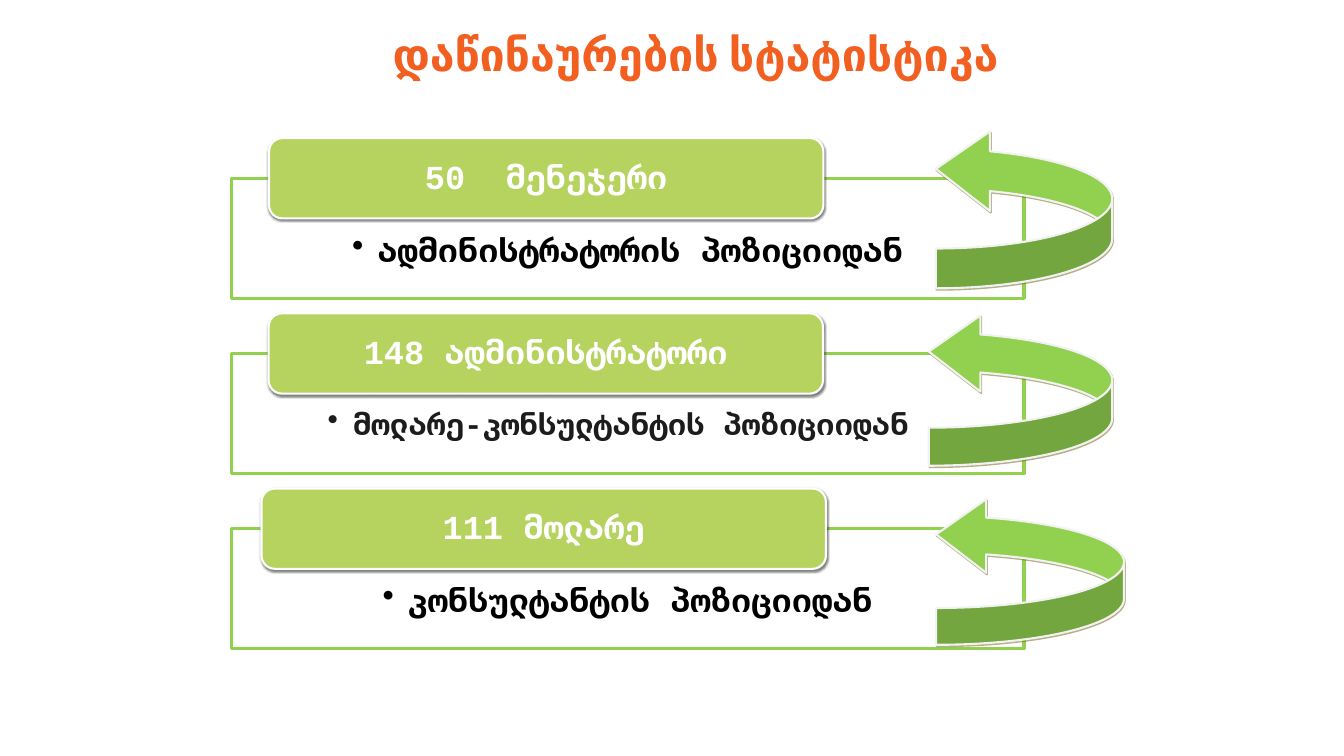
from lxml import etree
from pptx import Presentation
from pptx.dml.color import RGBColor
from pptx.enum.shapes import MSO_SHAPE
from pptx.enum.text import MSO_ANCHOR, MSO_AUTO_SIZE, PP_ALIGN
from pptx.oxml.ns import qn
from pptx.util import Cm, Pt

RECTANGLE = MSO_SHAPE.RECTANGLE
ROUNDED = MSO_SHAPE.ROUNDED_RECTANGLE
CURVED_ARROW = MSO_SHAPE.CURVED_UP_ARROW
TOP, MIDDLE = MSO_ANCHOR.TOP, MSO_ANCHOR.MIDDLE
CENTER = PP_ALIGN.CENTER
NO_AUTOFIT = MSO_AUTO_SIZE.NONE

TITLE = "დაწინაურების სტატისტიკა"
PROMOTIONS = [
    {"role": "50  მენეჯერი", "origin": "ადმინისტრატორის პოზიციიდან",
     "size": 48, "color": "black", "badge": (13.56, 27.94),
     "arrow": (47.6, 6.07, 8.03, 8.89)},
    {"role": "148 ადმინისტრატორი", "origin": "მოლარე-კონსულტანტის პოზიციიდან ",
     "size": 44, "color": "ink", "badge": (13.54, 27.94),
     "arrow": (47.6, 15.01, 7.67, 9.25)},
    {"role": "111 მოლარე", "origin": "კონსულტანტის პოზიციიდან",
     "size": 48, "color": "black", "badge": (13.18, 28.45),
     "arrow": (48.21, 24.05, 7.42, 9.47)},
]

THEME = {
    "orange": "F26021", "green": "92D050", "lime": "B6D25F", "white": "FFFFFF",
    "pale": "F2F2F2", "black": "000000", "ink": "1C1C1C", "olive": "6E5E11",
    "title_font": "Calibri", "body_font": "Courier New",
    "title_size": 64, "role_size": 48,
}

PANEL_LEFT, PANEL_TOP, PANEL_WIDTH, PANEL_HEIGHT = 11.68, 8.99, 39.93, 6.05
ROW_PITCH = 8.83
BADGE_RISE, BADGE_HEIGHT = 2.03, 4.05
BULLET_INDENT = 1.27


def rgb(name):
    return RGBColor.from_string(THEME[name])


def add_block(slide, preset, box, fill, line, line_width):
    block = slide.shapes.add_shape(preset, *(Cm(length) for length in box))
    block.shadow.inherit = False
    if fill:
        block.fill.solid()
        block.fill.fore_color.rgb = rgb(fill)
    else:
        block.fill.background()
    block.line.color.rgb = rgb(line)
    block.line.width = Pt(line_width)
    return block


def cast_shadow(block, color, blur, distance, angle):
    effects = block._element.spPr.find(qn("a:effectLst"))
    shadow = etree.SubElement(
        effects, qn("a:outerShdw"), blurRad=str(Pt(blur)), dist=str(Pt(distance)),
        dir=str(angle * 60000), algn="ctr", rotWithShape="0")
    tint = etree.SubElement(shadow, qn("a:srgbClr"), val=THEME[color])
    etree.SubElement(tint, qn("a:alpha"), val="50000")


def write(shape, text, font, size, color, anchor, insets, bullet=False):
    frame = shape.text_frame
    frame.text = text
    frame.word_wrap = True
    frame.auto_size = NO_AUTOFIT
    frame.vertical_anchor = anchor
    (frame.margin_left, frame.margin_top,
     frame.margin_right, frame.margin_bottom) = (Cm(inset) for inset in insets)
    paragraph = frame.paragraphs[0]
    paragraph.alignment = CENTER
    if bullet:
        paragraph.level = 1
        properties = paragraph._p.get_or_add_pPr()
        properties.set("marL", str(Cm(BULLET_INDENT)))
        properties.set("indent", str(-Cm(BULLET_INDENT)))
        etree.SubElement(properties, qn("a:buChar"), char="•")
    run_font = paragraph.runs[0].font
    run_font.name = font
    run_font.size = Pt(size)
    run_font.bold = True
    run_font.color.rgb = rgb(color)
    return paragraph


def add_promotion(slide, row, promotion):
    top = PANEL_TOP + row * ROW_PITCH
    panel = add_block(slide, RECTANGLE, (PANEL_LEFT, top, PANEL_WIDTH, PANEL_HEIGHT),
                      None, "green", 4.5)
    origin = write(panel, promotion["origin"], THEME["body_font"], promotion["size"],
                   promotion["color"], TOP, (3.56, 2.77, 3.56, 0.94), bullet=True)
    origin.line_spacing = 0.9

    left, width = promotion["badge"]
    badge = add_block(slide, ROUNDED, (left, top - BADGE_RISE, width, BADGE_HEIGHT),
                      "lime", "white", 3)
    cast_shadow(badge, "black", 3, 2, 90)
    role = write(badge, promotion["role"], THEME["body_font"], THEME["role_size"],
                 "white", MIDDLE, (1.4, 0.2, 1.4, 0.2))
    role.line_spacing = 0.9


def add_arrow(slide, box):
    arrow = add_block(slide, CURVED_ARROW, box, "green", "pale", 3)
    arrow.rotation = 270
    for index, value in enumerate((0.25, 0.5, 0.34)):
        arrow.adjustments[index] = value
    cast_shadow(arrow, "olive", 0, 2.2, 63)


def main():
    deck = Presentation()
    deck.slide_width, deck.slide_height = Cm(67.74), Cm(38.1)
    slide = deck.slides.add_slide(deck.slide_layouts[5])

    title = slide.shapes.title
    title.left, title.top, title.width, title.height = Cm(10.87), Cm(0), Cm(48.39), Cm(5.36)
    write(title, TITLE, THEME["title_font"], THEME["title_size"], "orange",
          MIDDLE, (0.51, 0.25, 0.51, 0.25))

    for row, promotion in enumerate(PROMOTIONS):
        add_promotion(slide, row, promotion)
    for promotion in PROMOTIONS:
        add_arrow(slide, promotion["arrow"])

    deck.save("out.pptx")


if __name__ == "__main__":
    main()
